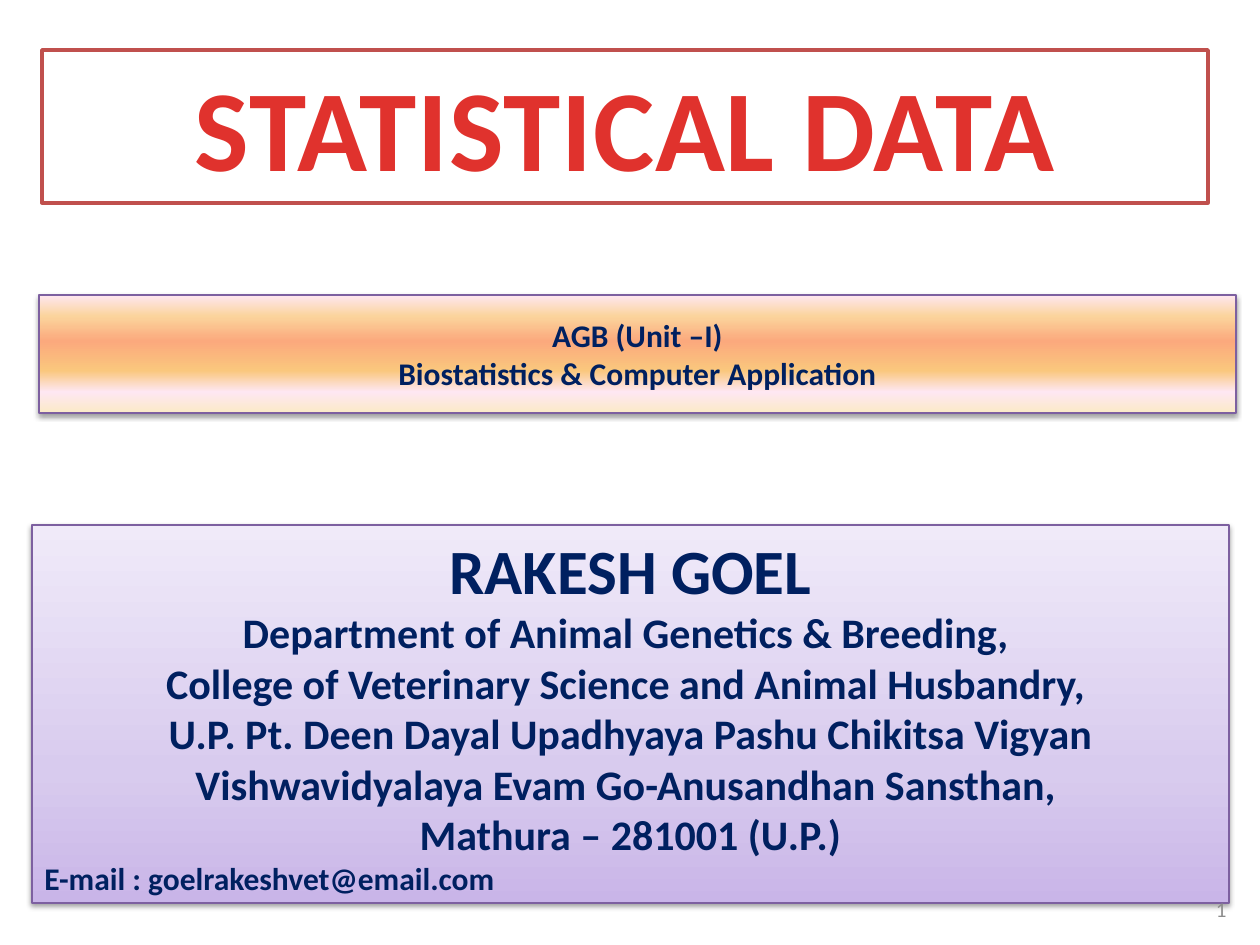
from lxml import etree
from pptx import Presentation
from pptx import util as u
from pptx.dml.color import RGBColor
from pptx.enum import shapes, text
from pptx.oxml import ns

PX = 914400 / 126
FONT = "Calibri"
COLORS = {
    "white": "FFFFFF",
    "title": "E0322D",
    "title_border": "C0504D",
    "navy": "002060",
    "purple": "7D60A0",
    "grey": "8C8C8C",
    "shadow": "000000",
}
LILAC = [(0, "C9B5E8"), (35, "D8CBEE"), (100, "F0EAF9")]
SUNSET = [(0, "FBEAC7"), (18, "FEE7F2"), (36, "FAC77D"),
          (61, "FBA97D"), (82, "FBD49C"), (100, "FEE7F2")]
LEFT, CENTER, RIGHT = text.PP_ALIGN.LEFT, text.PP_ALIGN.CENTER, text.PP_ALIGN.RIGHT
TOP, MIDDLE = text.MSO_ANCHOR.TOP, text.MSO_ANCHOR.MIDDLE


def px(*lengths):
    return [u.Emu(round(n * PX)) for n in lengths]


def rgb(name):
    return RGBColor.from_string(COLORS[name])


def add_color(parent, value, **modifiers):
    color = etree.SubElement(parent, ns.qn("a:srgbClr"), val=value)
    for tag, amount in modifiers.items():
        etree.SubElement(color, ns.qn(f"a:{tag}"), val=str(amount))


class SlideBuilder:
    def __init__(self, slide):
        self.slide = slide

    def panel(self, box, border, width):
        panel = self.slide.shapes.add_shape(shapes.MSO_SHAPE.RECTANGLE, *px(*box))
        panel.shadow.inherit = False
        panel.fill.solid()
        panel.fill.fore_color.rgb = rgb("white")
        panel.line.color.rgb = rgb(border)
        panel.line.width = u.Pt(width)
        return panel

    def gradient_panel(self, box, stops):
        """Add a shadowed panel whose gradient runs from bottom to top."""
        panel = self.panel(box, "purple", 0.75)
        panel.fill.gradient()
        panel.fill.gradient_angle = 90
        properties = panel._element.spPr
        stop_list = properties.find(ns.qn("a:gradFill")).find(ns.qn("a:gsLst"))
        for old in list(stop_list):
            stop_list.remove(old)
        for position, value in stops:
            stop = etree.SubElement(stop_list, ns.qn("a:gs"), pos=str(position * 1000))
            add_color(stop, value)
        shadow = etree.SubElement(
            properties.find(ns.qn("a:effectLst")), ns.qn("a:outerShdw"),
            blurRad=str(u.Pt(3.1)), dist=str(u.Pt(1.6)), dir="5400000", rotWithShape="0")
        add_color(shadow, COLORS["shadow"], alpha=38000)
        return panel

    def text_box(self, box):
        return self.slide.shapes.add_textbox(*px(*box))

    def set_lines(self, holder, lines, color, bold=True, anchor=MIDDLE):
        """Fill a shape with (wording, size, alignment) lines."""
        frame = holder.text_frame
        frame.word_wrap = True
        frame.vertical_anchor = anchor
        frame.text = "\n".join(wording for wording, _, _ in lines)
        for paragraph, (_, size, alignment) in zip(frame.paragraphs, lines):
            paragraph.alignment = alignment
            font = paragraph.runs[0].font
            font.name, font.size, font.bold = FONT, u.Pt(size), bold
            font.color.rgb = rgb(color)


def main():
    deck = Presentation()
    deck.slide_width, deck.slide_height = u.Inches(10), u.Inches(7.5)
    builder = SlideBuilder(deck.slides.add_slide(deck.slide_layouts[6]))

    title = builder.panel((42, 50, 1166, 153), "title_border", 2)
    builder.set_lines(title, [("STATISTICAL DATA", 66, CENTER)], "title", anchor=TOP)
    title.text_frame.paragraphs[0].runs[0].font._element.set("spc", "50")

    author = builder.gradient_panel((32, 525, 1197, 378), LILAC)
    affiliation = [
        "Department of Animal Genetics & Breeding, ",
        "College of Veterinary Science and Animal Husbandry, ",
        "U.P. Pt. Deen Dayal Upadhyaya Pashu Chikitsa Vigyan "
        "Vishwavidyalaya Evam Go-Anusandhan Sansthan, ",
        "Mathura – 281001 (U.P.)",
    ]
    builder.set_lines(author, [
        ("RAKESH GOEL", 36, CENTER),
        *((line, 24, CENTER) for line in affiliation),
        ("E-mail : goelrakeshvet@email.com", 18, LEFT),
    ], "navy")

    page_number = builder.text_box((1134, 892, 105, 34))
    builder.set_lines(page_number, [("1", 12, RIGHT)], "grey", bold=False)

    course = builder.gradient_panel((39, 295, 1197, 118), SUNSET)
    builder.set_lines(course, [
        ("AGB (Unit –I)", 18, CENTER),
        ("Biostatistics & Computer Application", 18, CENTER),
    ], "navy")

    deck.save("out.pptx")


if __name__ == "__main__":
    main()
